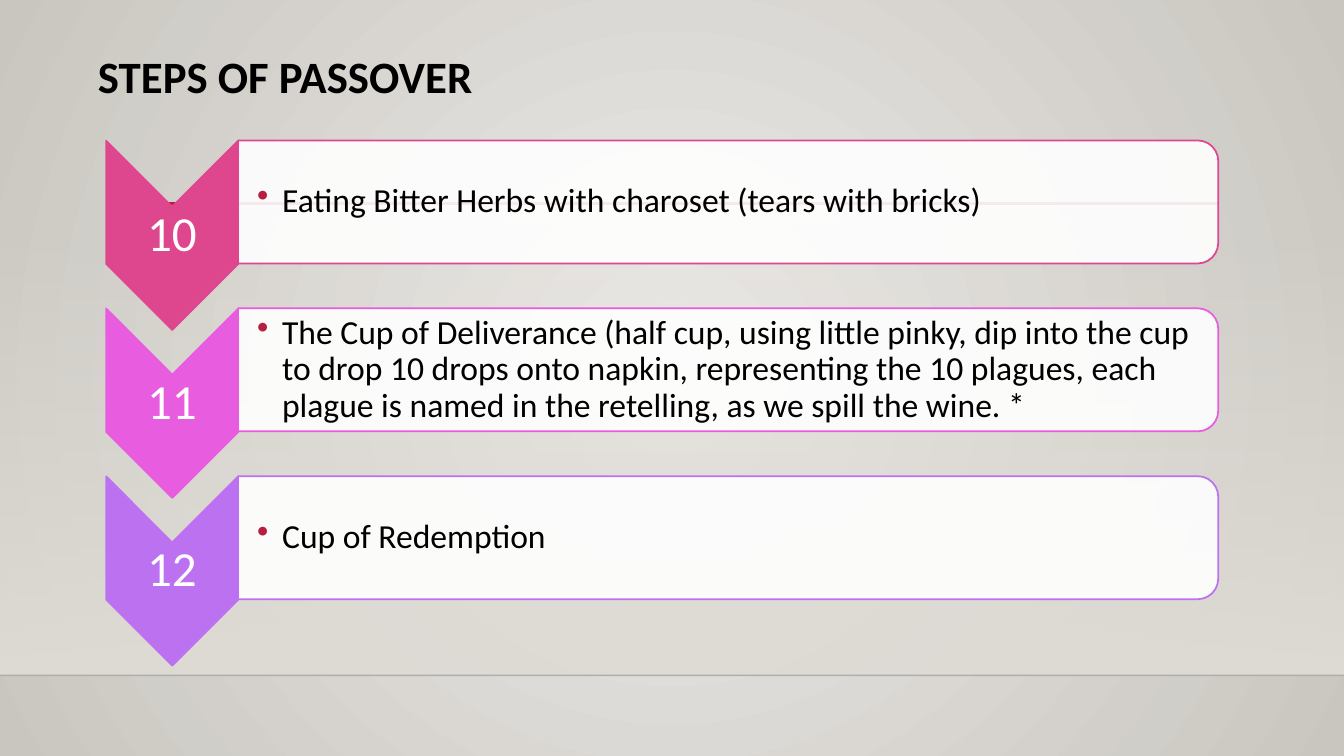
from lxml import etree
from pptx import Presentation
from pptx.dml.color import RGBColor
from pptx.enum.shapes import MSO_CONNECTOR, MSO_SHAPE
from pptx.enum.text import MSO_ANCHOR, PP_ALIGN
from pptx.oxml.ns import qn
from pptx.util import Cm, Pt

STRAIGHT = MSO_CONNECTOR.STRAIGHT
CHEVRON, PANEL, RECT = MSO_SHAPE.CHEVRON, MSO_SHAPE.ROUND_2_SAME_RECTANGLE, MSO_SHAPE.RECTANGLE
TOP, MIDDLE = MSO_ANCHOR.TOP, MSO_ANCHOR.MIDDLE
LEFT, CENTER = PP_ALIGN.LEFT, PP_ALIGN.CENTER

COLORS = {
    "glow": "ECEAE7", "edge": "C9C6C0", "floor": "DFDBD5", "rule": "B71E42",
    "black": "000000", "white": "FFFFFF",
    "pink": "DE478E", "magenta": "E85CE0", "violet": "BC72F0",
}
RGB = {name: RGBColor.from_string(code) for name, code in COLORS.items()}

STEPS = [
    ("10", "pink", "Eating Bitter Herbs with charoset (tears with bricks)"),
    ("11", "magenta", "The Cup of Deliverance (half cup, using little pinky, dip into the cup "
     "to drop 10 drops onto napkin, representing the 10 plagues, each plague is named in the "
     "retelling, as we spill the wine. *"),
    ("12", "violet", "Cup of Redemption"),
]
PITCH = 4.23

deck = Presentation()
deck.slide_width, deck.slide_height = Cm(33.87), Cm(19.05)
slide = deck.slides.add_slide(deck.slide_layouts[6])
shapes = slide.shapes


def add_alpha(node, percent):
    """Set the opacity of the first colour under node."""
    color = next(node.iter(qn("a:srgbClr")))
    etree.SubElement(color, qn("a:alpha"), val=str(percent * 1000))


def add_text(text, box, size, color, align=LEFT, anchor=MIDDLE, inset=0.05):
    """Add a wrapped one-paragraph text box and return its paragraph."""
    frame = shapes.add_textbox(*map(Cm, box)).text_frame
    frame.word_wrap, frame.vertical_anchor = True, anchor
    frame.margin_left = frame.margin_right = Cm(inset)
    frame.margin_top = frame.margin_bottom = Cm(inset)
    para = frame.paragraphs[0]
    para.text, para.alignment, para.line_spacing = text, align, 0.9
    para.font.name, para.font.size = "Calibri", Pt(size)
    para.font.color.rgb = RGB[color]
    return para


# Backdrop: radial glow, fading wall and floor line
back = slide.background.fill
back.gradient()
for stop, name in zip(back.gradient_stops, ("glow", "edge")):
    stop.color.rgb = RGB[name]
grad = next(slide.element.iter(qn("a:gradFill")))
lin = grad.find(qn("a:lin"))
ring = etree.Element(qn("a:path"), path="circle")
etree.SubElement(ring, qn("a:fillToRect"), l="50000", t="50000", r="50000", b="50000")
grad.replace(lin, ring)

wall = shapes.add_shape(RECT, 0, Cm(5.61), deck.slide_width, Cm(11.41))
wall.shadow.inherit = False
wall.line.fill.background()
wall.fill.gradient()
wall.fill.gradient_angle = 270
for stop in wall.fill.gradient_stops:
    stop.color.rgb = RGB["floor"]
add_alpha(wall.element.spPr, 0)

for start, end, y, name, width in [(0, 33.87, 17.02, "black", 1),
                                   (4.04, 30.73, 5.13, "rule", 2.5)]:
    rule = shapes.add_connector(STRAIGHT, Cm(start), Cm(y), Cm(end), Cm(y))
    rule.line.color.rgb, rule.line.width = RGB[name], Pt(width)
    if name == "black":
        add_alpha(rule.line._get_or_add_ln(), 20)
    etree.SubElement(rule._element.spPr, qn("a:effectLst"))

title = add_text("STEPS OF PASSOVER", (2.34, 1.24, 26.67, 2.92), 32, "black",
                 anchor=TOP, inset=0.13)
title.font.bold = True

# One row per step: a downward chevron and a panel, both turned by 90 degrees
for row, (number, hue, text) in enumerate(STEPS):
    drop = row * PITCH
    for kind, x, y, wide, high, fill in [(CHEVRON, 4.34, 5.93, 4.77, 3.33, hue),
                                         (PANEL, 18.35, 5.09, 3.1, 24.7, "white")]:
        part = shapes.add_shape(kind, Cm(x - wide / 2), Cm(y + drop - high / 2),
                                Cm(wide), Cm(high))
        part.rotation = 90
        part.shadow.inherit = False
        part.fill.solid()
        part.fill.fore_color.rgb = RGB[fill]
        part.line.color.rgb, part.line.width = RGB[hue], Pt(1.25)
        if kind == PANEL:
            add_alpha(part.element.spPr, 90)
    add_text(number, (2.67, 5.13 + drop, 3.33, 1.6), 35, "white", CENTER)
    item = add_text(text, (6.43, 3.54 + drop, 24.13, 3.1), 24, "black")
    props = item._p.get_or_add_pPr()
    props.set("marL", str(Cm(0.63)))
    props.set("indent", str(Cm(-0.63)))
    tint = etree.Element(qn("a:buClr"))
    etree.SubElement(tint, qn("a:srgbClr"), val=COLORS["rule"])
    bullet = etree.Element(qn("a:buChar"), char="•")
    for node in (tint, bullet):
        props.find(qn("a:defRPr")).addprevious(node)

deck.save("out.pptx")
